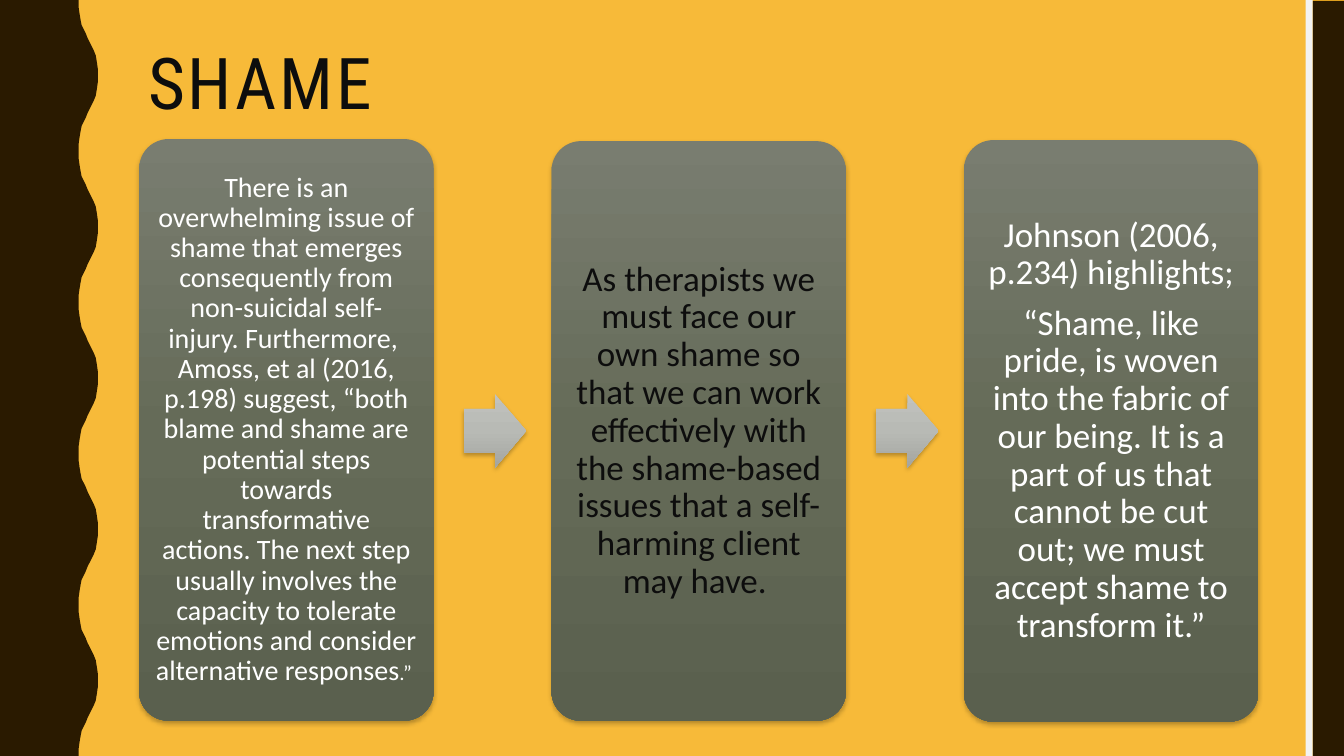
from dataclasses import dataclass

from pptx import Presentation
from pptx.dml.color import RGBColor
from pptx.enum.shapes import MSO_SHAPE
from pptx.enum.text import MSO_ANCHOR, MSO_AUTO_SIZE, PP_ALIGN
from pptx.oxml import parse_xml
from pptx.oxml.ns import nsdecls, qn
from pptx.oxml.xmlchemy import OxmlElement
from pptx.shapes.autoshape import Shape
from pptx.slide import Slide
from pptx.util import Inches, Pt

AMBER = RGBColor(0xF8, 0xB3, 0x23)
BROWN = RGBColor(0x2A, 0x1A, 0x00)
PALE = RGBColor(0xF3, 0xF3, 0xF2)
INK = RGBColor(0x0D, 0x0D, 0x0D)
WHITE = RGBColor(0xFF, 0xFF, 0xFF)
OLIVE = (RGBColor(0x79, 0x7D, 0x70), RGBColor(0x65, 0x6B, 0x58), RGBColor(0x5A, 0x60, 0x4E))
GREY = (RGBColor(0xC1, 0xC2, 0xBE), RGBColor(0xB8, 0xBA, 0xB5), RGBColor(0xA4, 0xA5, 0xA0))

WIDTH, HEIGHT = 13.33, 7.5
CARD_LEFT, ARROW_LEFT, STEP = 1.38, 4.6, 4.09
HALF_WAVE = 0.75
CURVE = [(0.78, 0), (0.78, 0.07), (0.79, 0.14), (0.8, 0.2), (0.81, 0.25),
         (0.83, 0.29), (0.85, 0.33), (0.87, 0.38), (0.89, 0.42), (0.91, 0.46),
         (0.93, 0.5), (0.95, 0.55), (0.96, 0.61), (0.97, 0.68), (0.97, 0.75)]


@dataclass
class Card:
    top: float
    height: float
    size: int
    inset: float
    color: RGBColor
    text: str
    tail: str = ""


CARDS = [
    Card(1.38, 5.77, 20, 0.08, WHITE,
         "There is an overwhelming issue of shame that emerges consequently from "
         "non-suicidal self-injury. Furthermore,  Amoss, et al (2016, p.198) suggest, "
         "“both blame and shame are potential steps towards transformative actions. "
         "The next step usually involves the capacity to tolerate emotions and "
         "consider alternative responses", ".” "),
    Card(1.4, 5.75, 25, 0.1, INK,
         "As therapists we must face our own shame so that we can work effectively "
         "with the shame-based issues that a self-harming client may have. "),
    Card(1.39, 5.77, 25, 0.1, WHITE,
         "Johnson (2006, p.234) highlights;\n"
         "“Shame, like pride, is woven into the fabric of our being. It is a part of "
         "us that cannot be cut out; we must accept shame to transform it.”"),
]


def add_block(slide: Slide, kind: MSO_SHAPE, left: float, top: float,
              width: float, height: float) -> Shape:
    shape = slide.shapes.add_shape(kind, Inches(left), Inches(top), Inches(width), Inches(height))
    shape.line.fill.background()
    shape.shadow.inherit = False
    return shape


def add_band(slide: Slide, left: float, top: float, width: float, color: RGBColor) -> Shape:
    band = add_block(slide, MSO_SHAPE.RECTANGLE, left, top, width, HEIGHT)
    band.fill.solid()
    band.fill.fore_color.rgb = color
    return band


def shade(shape: Shape, colors: tuple[RGBColor, ...]) -> None:
    """Give the shape a downward gradient and a soft shadow."""
    stops = "".join(f'<a:gs pos="{i * 50000}"><a:srgbClr val="{color}"/></a:gs>'
                    for i, color in enumerate(colors))
    props = shape.element.spPr
    props.find(qn("a:prstGeom")).addnext(parse_xml(
        f'<a:gradFill {nsdecls("a")} rotWithShape="1"><a:gsLst>{stops}</a:gsLst>'
        '<a:lin ang="5400000" scaled="0"/></a:gradFill>'))
    props.find(qn("a:effectLst")).append(parse_xml(
        f'<a:outerShdw {nsdecls("a")} blurRad="{Pt(3)}" dist="{Pt(2)}" dir="5400000" '
        'rotWithShape="0"><a:srgbClr val="000000"><a:alpha val="25000"/></a:srgbClr>'
        '</a:outerShdw>'))


def add_wave(slide: Slide) -> None:
    points = []
    for i in range(round(HEIGHT / HALF_WAVE)):
        half = CURVE if i % 2 == 0 else [(x, HALF_WAVE - y) for x, y in reversed(CURVE)]
        points += [(Inches(x), Inches(i * HALF_WAVE + y)) for x, y in half]
    path = slide.shapes.build_freeform(0, 0)
    path.add_line_segments(points + [(0, Inches(HEIGHT))], close=True)
    wave = path.convert_to_shape()
    wave.fill.solid()
    wave.fill.fore_color.rgb = BROWN
    wave.line.fill.background()
    wave.shadow.inherit = False


def place_title(slide: Slide) -> None:
    title = slide.shapes.title
    title.left, title.top = Inches(1.37), Inches(0.42)
    title.width, title.height = Inches(11.13), Inches(1.63)
    frame = title.text_frame
    frame.text = "SHAME"
    frame.auto_size = MSO_AUTO_SIZE.NONE
    frame.vertical_anchor = MSO_ANCHOR.TOP
    line = frame.paragraphs[0]
    line.alignment = PP_ALIGN.LEFT
    line.line_spacing = 0.9
    run = line.runs[0]
    run.font.name, run.font.size = "Roboto Condensed", Pt(51)
    run.font.color.rgb = INK
    run._r.get_or_add_rPr().set("spc", "200")
    # Bring the title in front of the background bands
    title.element.getparent().append(title.element)


def add_card(slide: Slide, left: float, card: Card) -> None:
    shape = add_block(slide, MSO_SHAPE.ROUNDED_RECTANGLE, left, card.top, 2.92, card.height)
    shape.adjustments[0] = 0.1
    shade(shape, OLIVE)
    frame = shape.text_frame
    frame.word_wrap = True
    frame.vertical_anchor = MSO_ANCHOR.MIDDLE
    frame.margin_left = frame.margin_right = Inches(card.inset)
    frame.margin_top = frame.margin_bottom = Inches(card.inset)
    frame.text = card.text
    if card.tail:
        frame.paragraphs[-1].add_run().text = card.tail
    for line in frame.paragraphs:
        line.alignment = PP_ALIGN.CENTER
        line.line_spacing = 0.9
        line.space_after = Pt(0.35 * card.size)
        for run in line.runs:
            run.font.name = "Calibri"
            run.font.size = Pt(15 if run.text == card.tail else card.size)
            run.font.color.rgb = card.color


def add_arrow(slide: Slide, left: float) -> None:
    arrow = add_block(slide, MSO_SHAPE.RIGHT_ARROW, left, 3.91, 0.62, 0.73)
    arrow.adjustments[0], arrow.adjustments[1] = 0.6, 0.5
    shade(arrow, GREY)


def main() -> None:
    deck = Presentation()
    deck.slide_width, deck.slide_height = Inches(WIDTH), Inches(HEIGHT)
    slide = deck.slides.add_slide(deck.slide_layouts[5])
    slide.background.fill.solid()
    slide.background.fill.fore_color.rgb = PALE

    add_band(slide, 13.02, 0, 0.31, AMBER)
    wash = add_band(slide, 0, 0, WIDTH, AMBER)
    alpha = OxmlElement("a:alpha")
    alpha.set("val", "89000")
    wash.element.spPr.find(qn("a:solidFill"))[0].append(alpha)
    place_title(slide)
    add_wave(slide)
    add_band(slide, 12.95, 0, 0.07, PALE)
    add_band(slide, 13.02, 0.01, 0.31, BROWN)

    for i, card in enumerate(CARDS):
        add_card(slide, CARD_LEFT + i * STEP, card)
        if i < len(CARDS) - 1:
            add_arrow(slide, ARROW_LEFT + i * STEP)
    deck.save("out.pptx")


if __name__ == "__main__":
    main()
